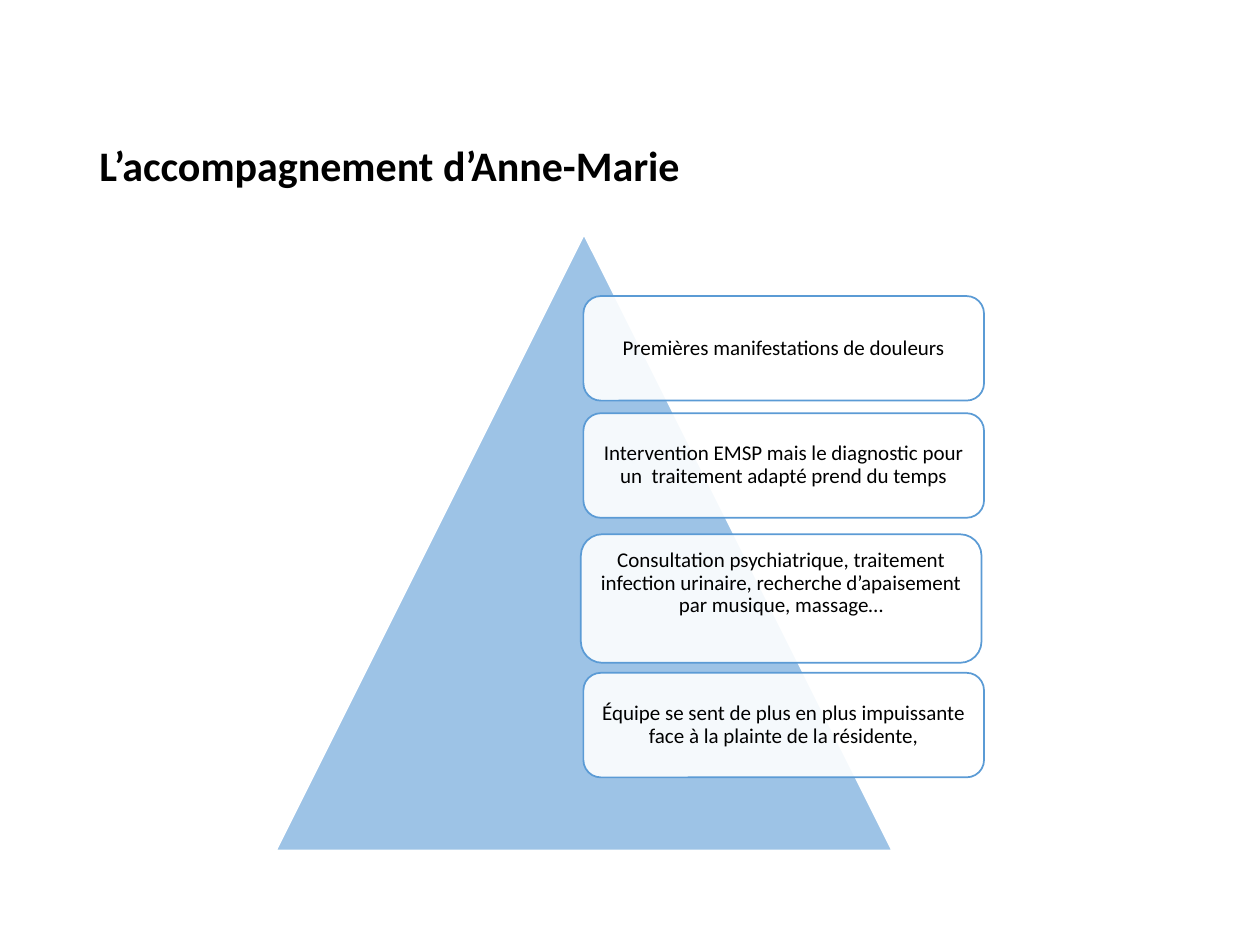
from lxml import etree
from pptx import Presentation
from pptx.dml.color import RGBColor
from pptx.enum.shapes import MSO_SHAPE
from pptx.enum.text import MSO_ANCHOR, PP_ALIGN
from pptx.oxml.ns import qn
from pptx.util import Inches, Pt

TRIANGLE = MSO_SHAPE.ISOSCELES_TRIANGLE
ROUNDED = MSO_SHAPE.ROUNDED_RECTANGLE
TOP, MIDDLE = MSO_ANCHOR.TOP, MSO_ANCHOR.MIDDLE
LEFT, CENTER = PP_ALIGN.LEFT, PP_ALIGN.CENTER
COLORS = {"text": "000000", "pyramid": "9DC3E6", "card": "FFFFFF", "border": "5B9BD5"}


def write(box, text, anchor, align, size, bold=False):
    frame = box.text_frame
    for name, value in {"word_wrap": True, "vertical_anchor": anchor}.items():
        setattr(frame, name, value)
    para = frame.paragraphs[0]
    for name, value in {"alignment": align, "line_spacing": 0.9}.items():
        setattr(para, name, value)
    span = para.add_run()
    span.text = text
    for name, value in {"name": "Calibri", "size": Pt(size), "bold": bold}.items():
        setattr(span.font, name, value)
    span.font.color.rgb = RGBColor.from_string(COLORS["text"])


def add_figure(shapes, kind, place, fill, line):
    figure = shapes.add_shape(kind, *map(Inches, place))
    figure.shadow.inherit = False
    figure.fill.solid()
    figure.fill.fore_color.rgb = RGBColor.from_string(COLORS[fill])
    figure.line.color.rgb = RGBColor.from_string(COLORS[line])
    figure.line.width = Pt(1)
    return figure


deck = Presentation()
deck.slide_width, deck.slide_height = Inches(10), Inches(7.5)
page = deck.slides.add_slide(deck.slide_layouts[6])

# Title
title = page.shapes.add_textbox(Inches(0.69), Inches(1.1), Inches(8.62), Inches(0.55))
write(title, "L’accompagnement d’Anne-Marie", TOP, LEFT, 24, bold=True)

# Pyramid
diagram = page.shapes.add_group_shape()
add_figure(diagram.shapes, TRIANGLE, (2.19, 1.86, 4.89, 4.89), "pyramid", "card")

# Cards: left, top, height, bottom inset, text
cards = [
    (4.63, 2.35, 0.83, 0.05, "Premières manifestations de douleurs"),
    (4.63, 3.28, 0.83, 0.05,
     "Intervention EMSP mais le diagnostic pour un  traitement adapté prend du temps"),
    (4.61, 4.24, 1.02, 0.29,
     "Consultation psychiatrique, traitement infection urinaire, "
     "recherche d’apaisement par musique, massage…"),
    (4.63, 5.34, 0.83, 0.05,
     "Équipe se sent de plus en plus impuissante face à la plainte de la résidente,"),
]
for left, top, height, bottom, text in cards:
    card = add_figure(diagram.shapes, ROUNDED, (left, top, 3.18, height), "card", "border")
    color = card.fill._xPr.find(qn("a:solidFill"))[0]
    etree.SubElement(color, qn("a:alpha"), val="90000")
    for side in ("left", "top", "right"):
        setattr(card.text_frame, f"margin_{side}", Inches(0.05))
    card.text_frame.margin_bottom = Inches(bottom)
    write(card, text, MIDDLE, CENTER, 12)

deck.save("out.pptx")
